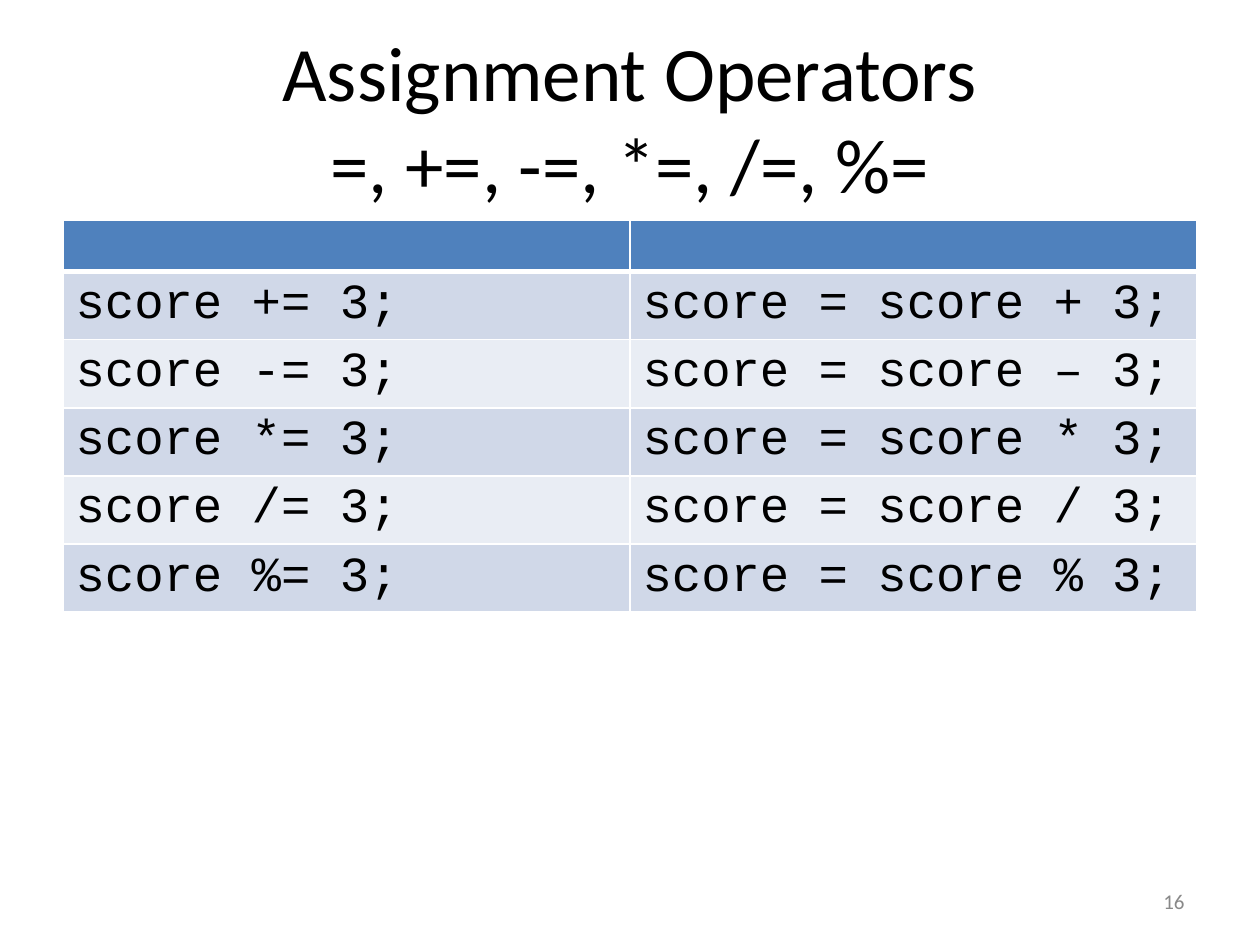
from pptx import Presentation, util as u
from pptx.dml.color import RGBColor
from pptx.enum import text
from pptx.oxml import parse_xml
from pptx.oxml.ns import nsdecls

COLORS = {
    "black": "000000",
    "white": "FFFFFF",
    "gray": "898989",
    "header": "4F81BD",
    "band_dark": "D0D8E8",
    "band_light": "E9EDF4",
}
TITLE = "Assignment Operators\v=, +=, -=, *=, /=, %="
OPERATORS = [("+", "+"), ("-", "–"), ("*", "*"), ("/", "/"), ("%", "%")]
LEFT, WIDTH = 36, 648
HEADER_HEIGHT, ROW_HEIGHT = 29.2, 38.9


def write_text(frame, words, align, name, size, color):
    frame.text = words
    para = frame.paragraphs[0]
    para.alignment = align
    for span in para.runs:
        for key, value in {"name": name, "size": u.Pt(size), "bold": False}.items():
            setattr(span.font, key, value)
        span.font.color.rgb = RGBColor.from_string(COLORS[color])


def place(box, left, top, width, height):
    bounds = {"left": left, "top": top, "width": width, "height": height}
    for key, value in bounds.items():
        setattr(box, key, u.Pt(value))
    settings = {
        "word_wrap": True,
        "auto_size": text.MSO_AUTO_SIZE.NONE,
        "vertical_anchor": text.MSO_ANCHOR.MIDDLE,
    }
    for key, value in settings.items():
        setattr(box.text_frame, key, value)


def add_title(page):
    box = page.shapes.title
    place(box, LEFT, 21.6, WIDTH, 90)
    write_text(box.text_frame, TITLE, text.PP_ALIGN.CENTER, "Calibri", 44, "black")


def add_page_number(page):
    box = page.shapes.add_textbox(0, 0, 0, 0)
    place(box, 516, 500.4, 168, 28.8)
    write_text(box.text_frame, "16", text.PP_ALIGN.RIGHT, "Calibri", 12, "gray")


def format_cell(cell, fill, top, bottom):
    cell.fill.solid()
    cell.fill.fore_color.rgb = RGBColor.from_string(COLORS[fill])
    properties = cell._tc.get_or_add_tcPr()
    edges = {"lnL": 1, "lnR": 1, "lnT": top, "lnB": bottom}
    for index, (edge, width) in enumerate(edges.items()):
        properties.insert(index, parse_xml(
            f'<a:{edge} {nsdecls("a")} w="{u.Pt(width)}"><a:solidFill>'
            f'<a:srgbClr val="{COLORS["white"]}"/></a:solidFill></a:{edge}>'
        ))


def add_operator_table(page):
    rows = [("", "")] + [
        (f"score {short}= 3;", f"score = score {full} 3;") for short, full in OPERATORS
    ]
    height = HEADER_HEIGHT + ROW_HEIGHT * len(OPERATORS)
    bounds = [u.Pt(value) for value in (LEFT, 126, WIDTH, height)]
    table = page.shapes.add_table(len(rows), 2, *bounds).table
    for index, words in enumerate(rows):
        table.rows[index].height = u.Pt(ROW_HEIGHT if index else HEADER_HEIGHT)
        band = "band_dark" if index % 2 else "band_light"
        for cell, line in zip(table.rows[index].cells, words):
            format_cell(
                cell,
                band if index else "header",
                3 if index == 1 else 1,
                1 if index else 3,
            )
            if line:
                write_text(cell.text_frame, line, text.PP_ALIGN.LEFT,
                           "Courier New", 28, "black")


def main():
    deck = Presentation()
    deck.slide_width, deck.slide_height = u.Pt(720), u.Pt(540)
    page = deck.slides.add_slide(deck.slide_layouts[5])
    add_title(page)
    add_operator_table(page)
    add_page_number(page)
    deck.save("out.pptx")


if __name__ == "__main__":
    main()
